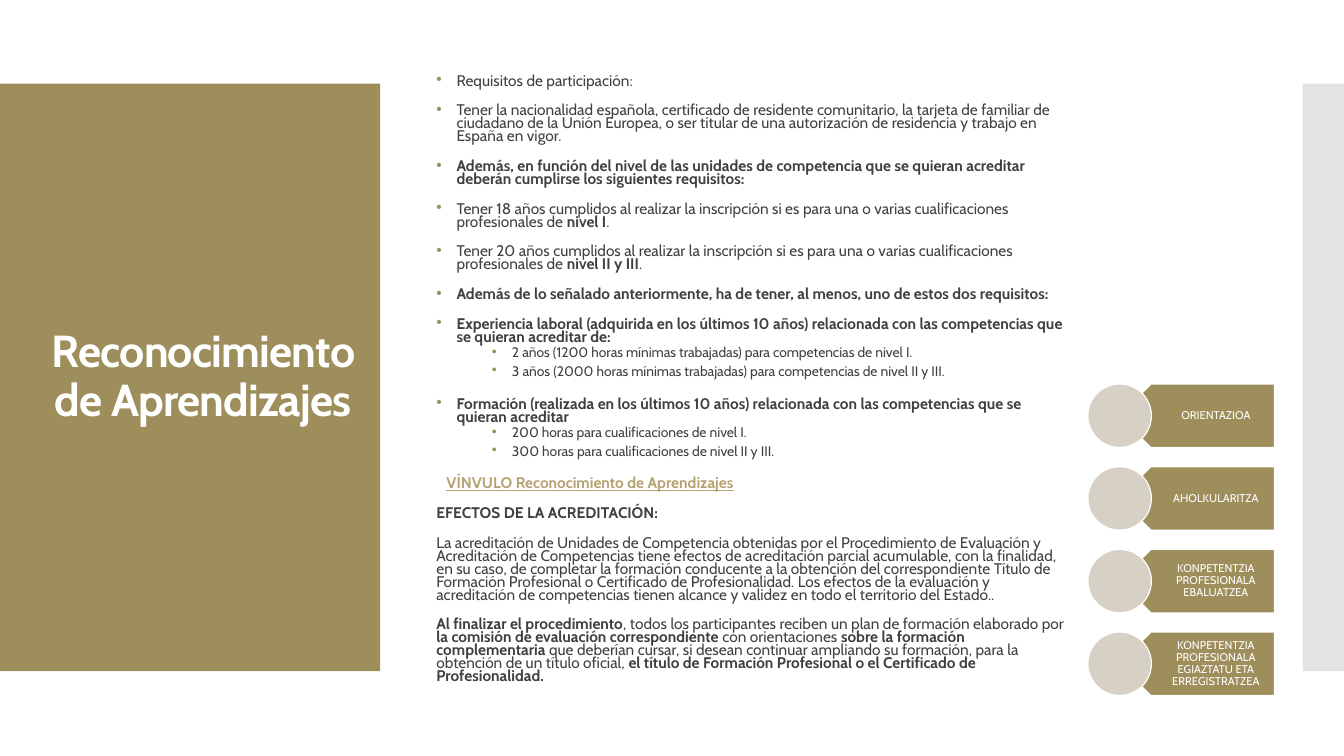
from lxml import etree
from pptx import Presentation
from pptx.dml.color import RGBColor
from pptx.enum.shapes import MSO_SHAPE
from pptx.enum.text import MSO_ANCHOR, PP_ALIGN
from pptx.oxml.ns import qn
from pptx.util import Inches, Pt

RECTANGLE = MSO_SHAPE.RECTANGLE
PENTAGON = MSO_SHAPE.PENTAGON
OVAL = MSO_SHAPE.OVAL
MIDDLE = MSO_ANCHOR.MIDDLE
CENTER = PP_ALIGN.CENTER
TITLE_ONLY = 5

FONT = "Cabin"
COLORS = {
    "olive": "9E8E5C",
    "link": "B6A272",
    "text": "404040",
    "white": "FFFFFF",
    "band": "C8C8C8",
    "circle": "D6D1C4",
}

# Kind of paragraph and its text; ** switches bold on and off.
REQUIREMENTS = [
    ("item", "Requisitos de participación:"),
    ("item", "Tener la nacionalidad española, certificado de residente comunitario, la tarjeta de "
             "familiar de ciudadano de la Unión Europea, o ser titular de una autorización de "
             "residencia y trabajo en España en vigor."),
    ("item", "**Además, en función del nivel de las unidades de competencia que se quieran "
             "acreditar deberán cumplirse los siguientes requisitos:**"),
    ("item", "Tener 18 años cumplidos al realizar la inscripción si es para una o varias "
             "cualificaciones profesionales de **nivel I**."),
    ("item", "Tener 20 años cumplidos al realizar la inscripción si es para una o varias "
             "cualificaciones profesionales de **nivel II y III**."),
    ("item", "**Además de lo señalado anteriormente, ha de tener, al menos, uno de estos dos "
             "requisitos:**"),
    ("item", "**Experiencia laboral (adquirida en los últimos 10 años) relacionada con las "
             "competencias que se quieran acreditar de:**"),
    ("subitem", "2 años (1200 horas mínimas trabajadas) para competencias de nivel I."),
    ("subitem", "3 años (2000 horas mínimas trabajadas) para competencias de nivel II y III."),
    ("item", "**Formación (realizada en los últimos 10 años) relacionada con las competencias "
             "que se quieran acreditar**"),
    ("subitem", "200 horas para cualificaciones de nivel I."),
    ("subitem", "300 horas para cualificaciones de nivel II y III."),
    ("link", "**VÍNVULO Reconocimiento de Aprendizajes**"),
    ("plain", "**EFECTOS DE LA ACREDITACIÓN:**"),
    ("plain", "La acreditación de Unidades de Competencia obtenidas por el Procedimiento de "
              "Evaluación y Acreditación de Competencias tiene efectos de acreditación parcial "
              "acumulable, con la finalidad, en su caso, de completar la formación conducente a la "
              "obtención del correspondiente Título de Formación Profesional o Certificado de "
              "Profesionalidad. Los efectos de la evaluación y acreditación de competencias tienen "
              "alcance y validez en todo el territorio del Estado.."),
    ("plain", "**Al finalizar el procedimiento**, todos los participantes reciben un plan de "
              "formación elaborado por** la comisión de evaluación correspondiente** con "
              "orientaciones **sobre la formación complementaria** que deberían cursar, si desean "
              "continuar ampliando su formación, para la obtención de un título oficial, **el "
              "título de Formación Profesional o el Certificado de Profesionalidad.**"),
]
FORMATS = {
    "item": dict(before=12, margin=0.2, bullet=True),
    "subitem": dict(size=9.9, before=2.5, after=2.5, margin=0.75, bullet=True, level=1),
    "link": dict(before=12, margin=0.1, color="link", underline=True),
    "plain": dict(before=12),
}
STAGES = [
    "ORIENTAZIOA",
    "AHOLKULARITZA",
    "KONPETENTZIA PROFESIONALA EBALUATZEA",
    "KONPETENTZIA PROFESIONALA EGIAZTATU ETA ERREGISTRATZEA",
]


def write(frame, text, size=11, color="text", underline=None, align=None, spacing=0.7,
          before=0, after=0, margin=0, bullet=False, level=0, tracking=None):
    """Add a paragraph, reusing the empty first one; ** in the text toggles bold."""
    first = not frame.text
    paragraph = frame.paragraphs[0] if first else frame.add_paragraph()
    paragraph.level = level
    paragraph.alignment = align
    paragraph.line_spacing = spacing
    paragraph.space_before = Pt(0 if first else before)
    paragraph.space_after = Pt(after)
    properties = paragraph._p.get_or_add_pPr()
    properties.set("marL", str(Inches(margin)))
    properties.set("indent", str(Inches(-0.2 if bullet else 0)))
    if bullet:
        bullet_color = etree.SubElement(properties, qn("a:buClr"))
        etree.SubElement(bullet_color, qn("a:srgbClr"), val=COLORS["olive"])
        etree.SubElement(properties, qn("a:buFont"), typeface="Arial")
        etree.SubElement(properties, qn("a:buChar"), char="•")
    for index, part in enumerate(text.split("**")):
        if not part:
            continue
        run = paragraph.add_run()
        run.text = part
        run.font.name = FONT
        run.font.size = Pt(size)
        run.font.bold = index % 2 == 1
        run.font.underline = underline
        run.font.color.rgb = RGBColor.from_string(COLORS[color])
        if tracking is not None:
            run._r.get_or_add_rPr().set("spc", str(round(tracking * 100)))


class SlideBuilder:
    def __init__(self, presentation):
        self.slide = presentation.slides.add_slide(presentation.slide_layouts[TITLE_ONLY])

    def shape(self, preset, left, top, width, height, fill, outline=None, alpha=None):
        shape = self.slide.shapes.add_shape(
            preset, Inches(left), Inches(top), Inches(width), Inches(height))
        shape.shadow.inherit = False
        shape.fill.solid()
        shape.fill.fore_color.rgb = RGBColor.from_string(COLORS[fill])
        if alpha is not None:
            fill_color = shape._element.spPr.find(".//" + qn("a:srgbClr"))
            etree.SubElement(fill_color, qn("a:alpha"), val=str(alpha * 1000))
        if outline:
            shape.line.color.rgb = RGBColor.from_string(COLORS[outline])
            shape.line.width = Pt(0.85)
        else:
            shape.line.fill.background()
        return shape

    def title(self, text, left, top, width, height, **style):
        title = self.slide.shapes.title
        title.left, title.top = Inches(left), Inches(top)
        title.width, title.height = Inches(width), Inches(height)
        title.text_frame.vertical_anchor = MIDDLE
        title.text_frame.word_wrap = True
        write(title.text_frame, text, **style)
        # Bring the title in front of the panel.
        self.slide.shapes._spTree.append(title._element)

    def text_frame(self, left, top, width, height, insets=(0.1, 0.05, 0.1, 0.05)):
        frame = self.slide.shapes.add_textbox(
            Inches(left), Inches(top), Inches(width), Inches(height)).text_frame
        frame.word_wrap = True
        frame.vertical_anchor = MIDDLE
        (frame.margin_left, frame.margin_top,
         frame.margin_right, frame.margin_bottom) = map(Inches, insets)
        return frame

    def stage(self, label, top, height=0.63):
        arrow = self.shape(PENTAGON, 11.1, top, 1.54, height, "olive", "white")
        arrow.rotation = 180
        frame = self.text_frame(11.26, top, 1.38, height, (0.28, 0.03, 0.06, 0.03))
        write(frame, label, size=8, color="white", align=CENTER, spacing=0.9)
        self.shape(OVAL, 10.79, top, height, height, "circle", "white")


def main():
    presentation = Presentation()
    presentation.slide_width = Inches(13.33)
    presentation.slide_height = Inches(7.5)
    builder = SlideBuilder(presentation)

    builder.shape(RECTANGLE, 0, 0.83, 3.77, 5.83, "olive")
    builder.shape(RECTANGLE, 12.92, 0.83, 0.41, 5.83, "band", alpha=50)
    builder.title("**Reconocimiento de Aprendizajes**", 0.28, 1.23, 3.47, 5.03,
                  size=32, color="white", spacing=0.9, tracking=-0.6)

    requirements = builder.text_frame(4.23, 0.43, 6.46, 6.68)
    for kind, text in REQUIREMENTS:
        write(requirements, text, **FORMATS[kind])

    for row, label in enumerate(STAGES):
        builder.stage(label, 3.81 + 0.82 * row)

    presentation.save("out.pptx")


if __name__ == "__main__":
    main()
